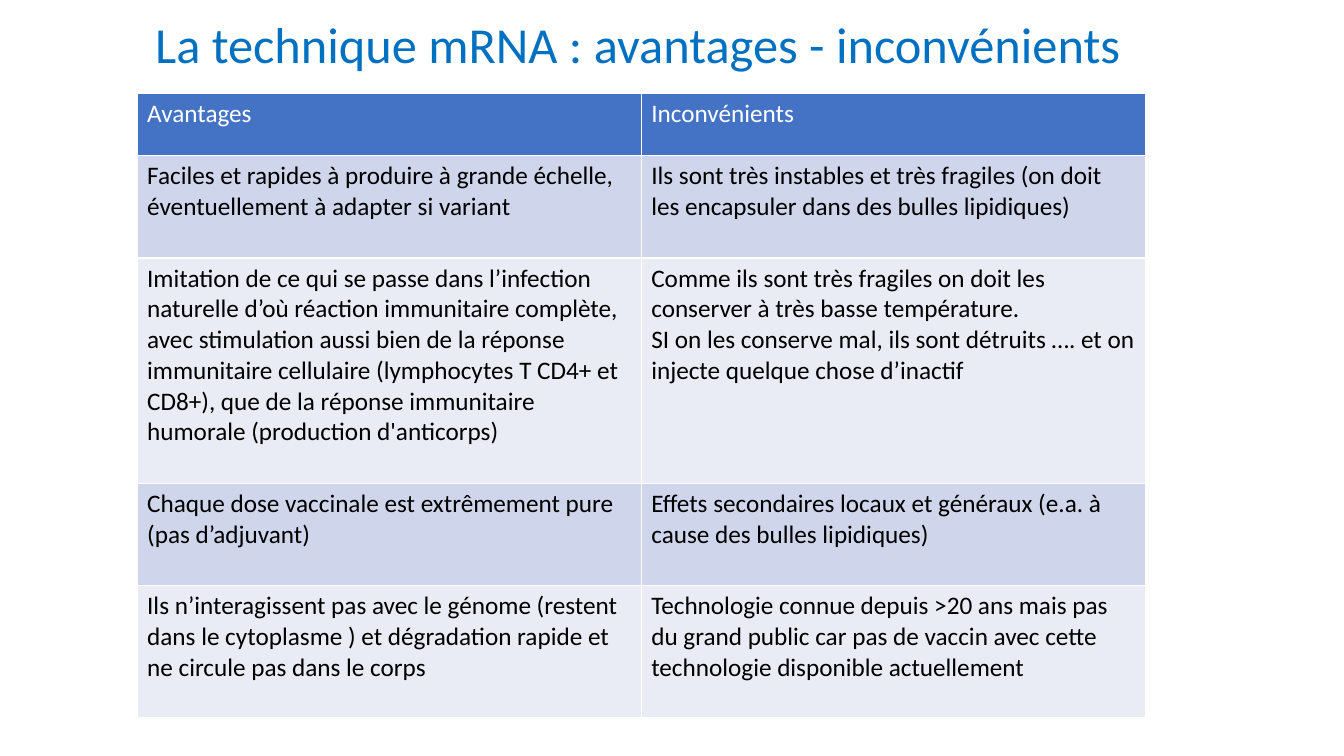
from dataclasses import dataclass

from pptx import Presentation
from pptx.dml.color import RGBColor
from pptx.enum.text import MSO_ANCHOR
from pptx.slide import Slide
from pptx.table import _Cell as Cell
from pptx.text.text import TextFrame
from pptx.util import Emu, Pt

EMU_PER_PX = 9144  # 100 px to the inch


@dataclass(frozen=True)
class Theme:
    font: str = "Calibri"
    title_size: int = 36
    body_size: int = 18
    title: str = "0070C0"
    header_text: str = "FFFFFF"
    header_fill: str = "4472C4"
    body_text: str = "000000"
    bands: tuple[str, str] = ("CFD5EA", "E9EBF5")


@dataclass(frozen=True)
class Box:
    left: int
    top: int
    width: int
    height: int

    def emu(self) -> list[Emu]:
        return [px(n) for n in (self.left, self.top, self.width, self.height)]


@dataclass(frozen=True)
class Comparison:
    height: int
    advantage: str
    drawback: str


THEME = Theme()
TITLE = "La technique mRNA : avantages - inconvénients"
TITLE_BOX = Box(144, 0, 1023, 93)
TABLE_LEFT, TABLE_TOP, TABLE_WIDTH = 136, 93, 1000

COMPARISONS = [
    Comparison(61, "Avantages", "Inconvénients"),
    Comparison(
        102,
        "Faciles et rapides à produire à grande échelle, éventuellement à adapter si variant",
        "Ils sont très instables et très fragiles (on doit les encapsuler dans des bulles lipidiques)",
    ),
    Comparison(
        224,
        "Imitation de ce qui se passe dans l’infection naturelle d’où réaction immunitaire "
        "complète, avec stimulation aussi bien de la réponse immunitaire cellulaire "
        "(lymphocytes T CD4+ et CD8+), que de la réponse immunitaire humorale "
        "(production d'anticorps)",
        "Comme ils sont très fragiles on doit les conserver à très basse température.\n"
        "SI on les conserve mal, ils sont détruits …. et on injecte quelque chose d’inactif",
    ),
    Comparison(
        101,
        "Chaque dose vaccinale est extrêmement pure (pas d’adjuvant)",
        "Effets secondaires locaux et généraux (e.a. à cause des bulles lipidiques)",
    ),
    Comparison(
        131,
        "Ils n’interagissent pas avec le génome (restent dans le cytoplasme ) et dégradation "
        "rapide et ne circule pas dans le corps",
        "Technologie connue depuis >20 ans mais pas du grand public car pas de vaccin avec "
        "cette technologie disponible actuellement",
    ),
]


def px(length: int) -> Emu:
    return Emu(length * EMU_PER_PX)


def write(frame: TextFrame, text: str, size: int, color: str) -> None:
    frame.text = text
    for paragraph in frame.paragraphs:
        for run in paragraph.runs:
            run.font.name = THEME.font
            run.font.size = Pt(size)
            run.font.bold = False
            run.font.color.rgb = RGBColor.from_string(color)


def add_title(slide: Slide) -> None:
    frame = slide.shapes.add_textbox(*TITLE_BOX.emu()).text_frame
    frame.word_wrap = True
    frame.vertical_anchor = MSO_ANCHOR.MIDDLE
    write(frame, TITLE, THEME.title_size, THEME.title)
    frame.paragraphs[0].line_spacing = 0.9


def fill_cell(cell: Cell, text: str, fill: str, color: str) -> None:
    cell.fill.solid()
    cell.fill.fore_color.rgb = RGBColor.from_string(fill)
    write(cell.text_frame, text, THEME.body_size, color)


def add_comparison_table(slide: Slide) -> None:
    height = sum(comparison.height for comparison in COMPARISONS)
    box = Box(TABLE_LEFT, TABLE_TOP, TABLE_WIDTH, height)
    # The table's built-in style supplies the white cell borders
    table = slide.shapes.add_table(len(COMPARISONS), 2, *box.emu()).table
    for index, comparison in enumerate(COMPARISONS):
        table.rows[index].height = px(comparison.height)
        if index == 0:
            fill, color = THEME.header_fill, THEME.header_text
        else:
            fill, color = THEME.bands[(index - 1) % 2], THEME.body_text
        for column, text in enumerate((comparison.advantage, comparison.drawback)):
            fill_cell(table.cell(index, column), text, fill, color)


def main() -> None:
    presentation = Presentation()
    presentation.slide_width, presentation.slide_height = px(1333), px(750)
    slide = presentation.slides.add_slide(presentation.slide_layouts[6])
    add_title(slide)
    add_comparison_table(slide)
    presentation.save("out.pptx")


if __name__ == "__main__":
    main()
